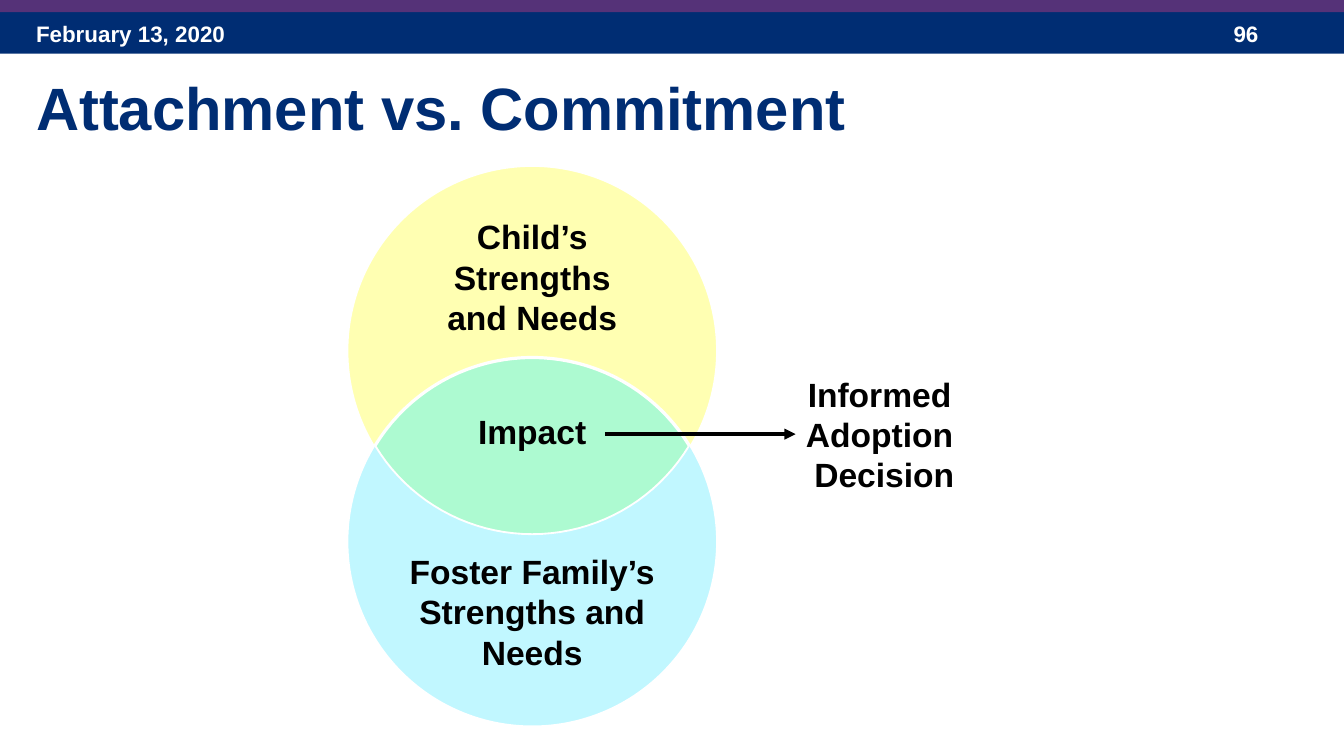
from dataclasses import dataclass
from math import acos, cos, pi, sin, sqrt

from lxml.etree import SubElement
from pptx import Presentation
from pptx.dml.color import RGBColor
from pptx.enum.shapes import MSO_CONNECTOR, MSO_SHAPE
from pptx.enum.text import MSO_ANCHOR, PP_ALIGN
from pptx.oxml.ns import qn
from pptx.util import Inches, Pt


@dataclass(frozen=True)
class Theme:
    font: str = "Arial"
    navy: str = "002D73"
    plum: str = "553278"
    white: str = "FFFFFF"
    black: str = "000000"
    yellow: str = "FFFF99"
    blue: str = "ADF5FF"
    green: str = "9AFEB9"
    small: int = 12
    body: int = 18
    title: int = 32


class Deck:
    def __init__(self, theme, slide):
        self.theme = theme
        self.shapes = slide.shapes

    def paint(self, shape, color, alpha=None, edge=None):
        shape.shadow.inherit = False
        shape.fill.solid()
        shape.fill.fore_color.rgb = RGBColor.from_string(color)
        if alpha:
            tone = shape._element.spPr.find(qn("a:solidFill"))[0]
            SubElement(tone, qn("a:alpha"), val=str(alpha * 1000))
        if edge:
            shape.line.color.rgb = RGBColor.from_string(edge)
            shape.line.width = Pt(1)
        else:
            shape.line.fill.background()

    def bar(self, top, height, color):
        box = self.shapes.add_shape(MSO_SHAPE.RECTANGLE, 0, Inches(top),
                                    Inches(10), Inches(height))
        self.paint(box, color)

    def disc(self, x, y, radius, color):
        size = Inches(2 * radius)
        shape = self.shapes.add_shape(MSO_SHAPE.OVAL, Inches(x - radius),
                                      Inches(y - radius), size, size)
        self.paint(shape, color, 75, self.theme.white)

    def lens(self, x, top, low, radius, color, steps=40):
        """Overlap of two discs centred at (x, top) and (x, low)."""
        half = (low - top) / 2
        wide = sqrt(radius ** 2 - half ** 2)
        turn = acos(wide / radius)
        sweep = (pi - 2 * turn) / steps
        spots = []
        for mid, start in ((top, turn), (low, pi + turn)):
            for i in range(steps):
                angle = start + i * sweep
                spots.append((Inches(x + radius * cos(angle)),
                              Inches(mid + radius * sin(angle))))
        pen = self.shapes.build_freeform(*spots[0])
        pen.add_line_segments(spots[1:], close=True)
        self.paint(pen.convert_to_shape(), color, 50, self.theme.white)

    def text(self, lines, left, top, width, height, size, color,
             align=PP_ALIGN.LEFT):
        box = self.shapes.add_textbox(Inches(left), Inches(top),
                                      Inches(width), Inches(height))
        frame = box.text_frame
        frame.word_wrap = True
        frame.vertical_anchor = MSO_ANCHOR.TOP
        frame.text = lines
        for para in frame.paragraphs:
            para.alignment = align
            para.font.name = self.theme.font
            para.font.size = Pt(size)
            para.font.bold = True
            para.font.color.rgb = RGBColor.from_string(color)

    def label(self, lines, x, top, width, height):
        self.text(lines, x - width / 2, top, width, height, self.theme.body,
                  self.theme.black, PP_ALIGN.CENTER)

    def arrow(self, start, end, y):
        line = self.shapes.add_connector(MSO_CONNECTOR.STRAIGHT, Inches(start),
                                         Inches(y), Inches(end), Inches(y))
        line.line.color.rgb = RGBColor.from_string(self.theme.black)
        line.line.width = Pt(1.75)
        props = line._element.spPr
        SubElement(props.find(qn("a:ln")), qn("a:tailEnd"), type="triangle")
        SubElement(props, qn("a:effectLst"))


def main():
    show = Presentation()
    show.slide_width = Inches(10)
    show.slide_height = Inches(10) * 9 // 16
    theme = Theme()
    deck = Deck(theme, show.slides.add_slide(show.slide_layouts[6]))

    # Header and title
    deck.bar(0.07, 0.33, theme.navy)
    deck.text("February 13, 2020", 0.17, 0.1, 2.33, 0.3, theme.small, theme.white)
    deck.text("96", 9.08, 0.1, 0.75, 0.3, theme.small, theme.white)
    deck.bar(0, 0.09, theme.plum)
    deck.text("Attachment vs. Commitment", 0.17, 0.48, 9.5, 0.7,
              theme.title, theme.navy)

    # Overlapping discs
    x, top, low, radius = 3.96, 2.61, 4.03, 2.75 / 2
    deck.disc(x, top, radius, theme.yellow)
    deck.disc(x, low, radius, theme.blue)
    deck.label("Child’s Strengths and Needs", x, 1.56, 1.67, 1.01)
    deck.label("Foster Family’s Strengths and Needs", x, 4.05, 2.21, 1.01)

    # Overlap and its outcome
    deck.label("Informed \nAdoption \nDecision", 6.58, 2.73, 1.67, 1.01)
    deck.lens(x, top, low, radius - 0.01, theme.green)
    deck.label("Impact", x, 3.01, 1.67, 0.4)
    deck.arrow(4.5, 5.92, 3.23)

    show.save("out.pptx")


if __name__ == "__main__":
    main()
